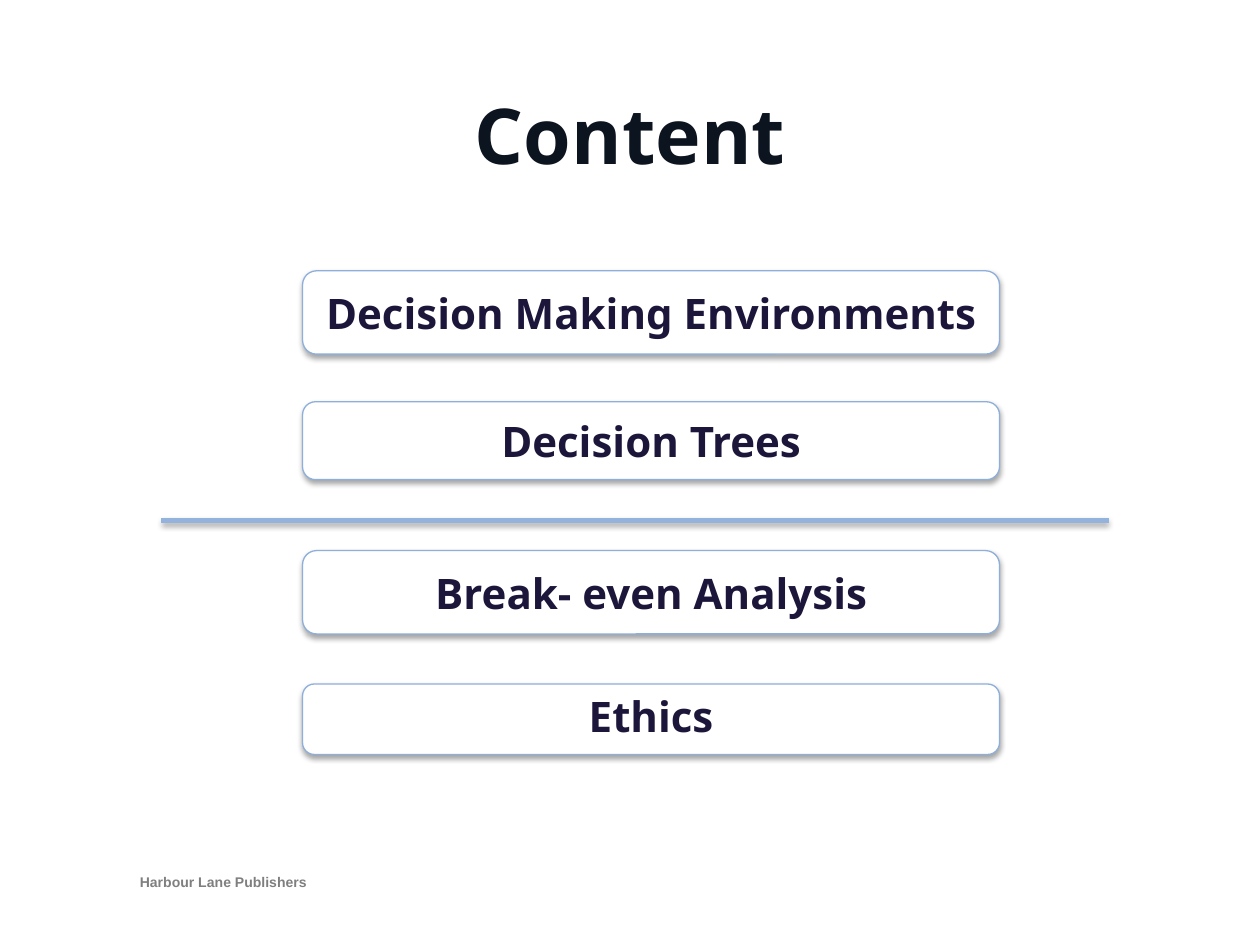
import pptx
import pptx.dml.color
import pptx.enum.shapes
import pptx.enum.text
import pptx.oxml
import pptx.oxml.ns
import pptx.util

Cm, Pt = pptx.util.Cm, pptx.util.Pt
ALIGN, ANCHOR = pptx.enum.text.PP_ALIGN, pptx.enum.text.MSO_ANCHOR

COLORS = {
    "white": "FFFFFF",
    "title": "0C1420",
    "topic": "1D163B",
    "border": "8EAFDA",
    "divider": "93B3DD",
    "footer": "7F7F7F",
}

# wording, top and height in cm, line spacing
TOPICS = [
    ("Decision Making Environments", 5.46, 1.68, 1.0),
    ("Decision Trees", 8.1, 1.57, 1.0),
    ("Break- even Analysis", 11.1, 1.68, 1.0),
    ("Ethics", 13.79, 1.42, 0.9),
]


def rgb(name):
    return pptx.dml.color.RGBColor.from_string(COLORS[name])


def add_soft_shadow(shape):
    """Give the shape a soft shadow falling straight down."""
    properties = shape._element.spPr
    for effects in properties.findall(pptx.oxml.ns.qn("a:effectLst")):
        properties.remove(effects)
    properties.append(pptx.oxml.parse_xml(
        f'<a:effectLst {pptx.oxml.ns.nsdecls("a")}>'
        '<a:outerShdw blurRad="40000" dist="23000" dir="5400000" rotWithShape="0">'
        '<a:srgbClr val="000000"><a:alpha val="35000"/></a:srgbClr>'
        '</a:outerShdw></a:effectLst>'))


def write_centred(shape, wording, size, font_name, color, anchor, spacing=1.0):
    frame = shape.text_frame
    frame.word_wrap = True
    frame.vertical_anchor = anchor
    paragraph = frame.paragraphs[0]
    paragraph.text = wording
    paragraph.alignment = ALIGN.CENTER
    paragraph.line_spacing = spacing
    font = paragraph.font
    font.size, font.name, font.bold = Pt(size), font_name, True
    font.color.rgb = rgb(color)


def add_title(slide, left, top, width, height):
    title = slide.shapes.add_textbox(left, top, width, height)
    write_centred(title, "Content", 44, "Noto Sans", "title", ANCHOR.MIDDLE, 0.9)


def add_topics(slide, left, width):
    for wording, top, height, spacing in TOPICS:
        topic = slide.shapes.add_shape(
            pptx.enum.shapes.MSO_SHAPE.ROUNDED_RECTANGLE,
            left, Cm(top), width, Cm(height))
        topic.fill.solid()
        topic.fill.fore_color.rgb = rgb("white")
        topic.line.color.rgb = rgb("border")
        topic.line.width = Pt(0.75)
        add_soft_shadow(topic)
        write_centred(topic, wording, 24, "Noto Sans", "topic", ANCHOR.MIDDLE, spacing)


def add_divider(slide, left, top, width):
    divider = slide.shapes.add_connector(
        pptx.enum.shapes.MSO_CONNECTOR.STRAIGHT, left, top, left + width, top)
    divider.line.color.rgb = rgb("divider")
    divider.line.width = Pt(3)
    add_soft_shadow(divider)


def add_footer(slide, left, top, width, height):
    footer = slide.shapes.add_textbox(left, top, width, height)
    write_centred(footer, "Harbour Lane Publishers", 8, "Arial", "footer", ANCHOR.TOP)


def main():
    deck = pptx.Presentation()
    deck.slide_width, deck.slide_height = Cm(25.4), Cm(19.05)
    slide = deck.slides.add_slide(deck.slide_layouts[6])
    add_title(slide, Cm(1.91), Cm(1.22), Cm(21.59), Cm(3.18))
    add_topics(slide, Cm(6.1), Cm(14.05))
    add_divider(slide, Cm(3.25), Cm(10.49), Cm(19.1))
    add_footer(slide, Cm(0.48), Cm(17.48), Cm(8.05), Cm(1.02))
    deck.save("out.pptx")


if __name__ == "__main__":
    main()
